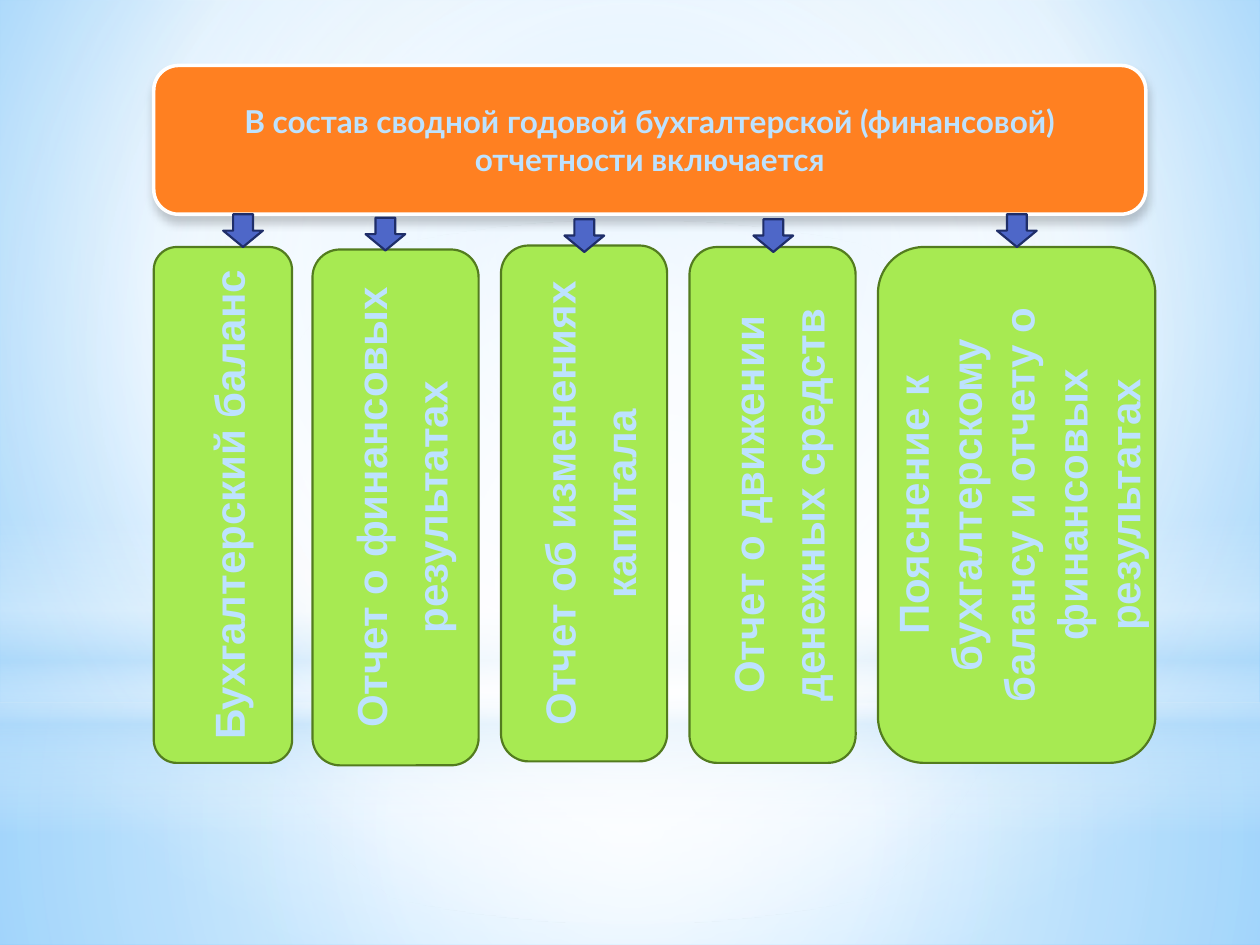
from lxml import etree
from pptx import Presentation
from pptx import util as u
from pptx.dml.color import RGBColor
from pptx.enum import shapes, text
from pptx.oxml import parse_xml
from pptx.oxml.ns import nsdecls, qn

ORANGE = RGBColor(0xFF, 0x80, 0x21)
GREEN = RGBColor(0xA7, 0xEA, 0x52)
DARK_GREEN = RGBColor(0x53, 0x7C, 0x1F)
BLUE = RGBColor(0x4E, 0x67, 0xC8)
NAVY = RGBColor(0x1F, 0x2E, 0x69)
OUTLINE = RGBColor(0x17, 0x20, 0x4F)
PALE = RGBColor(0xBD, 0xE2, 0xFF)
SKY = RGBColor(0x9E, 0xD5, 0xFF)
DEEP_SKY = RGBColor(0x5B, 0xB9, 0xFF)
MIST = RGBColor(0xB4, 0xDC, 0xFA)
WHITE = RGBColor(0xFF, 0xFF, 0xFF)
BLACK = RGBColor(0, 0, 0)


def set_gradient(element, stops, focus):
    stops_xml = "".join(
        f'<a:gs pos="{pos * 1000}"><a:srgbClr val="{color}">'
        f'<a:alpha val="{alpha * 1000}"/></a:srgbClr></a:gs>'
        for pos, color, alpha in stops)
    direction = '<a:lin ang="5400000" scaled="0"/>'
    if focus:
        l, t, r, b = (side * 1000 for side in focus)
        direction = (f'<a:path path="circle"><a:fillToRect l="{l}" t="{t}" '
                     f'r="{r}" b="{b}"/></a:path>')
    solid = element.find(".//" + qn("a:solidFill"))
    solid.getparent().replace(solid, parse_xml(
        f'<a:gradFill rotWithShape="1" {nsdecls("a")}>'
        f'<a:gsLst>{stops_xml}</a:gsLst>{direction}</a:gradFill>'))


def add_text(sp, content, font="Arial", size=24, spacing=1.0, vert="horz"):
    tf = sp.text_frame
    tf.word_wrap = True
    tf.vertical_anchor = text.MSO_ANCHOR.MIDDLE
    tf._txBody.bodyPr.set("vert", vert)
    p = tf.paragraphs[0]
    p.alignment = text.PP_ALIGN.CENTER
    p.line_spacing = spacing
    r = p.add_run()
    r.text = content
    r.font.name = font
    r.font.size = u.Pt(size)
    r.font.bold = True
    r.font.color.rgb = PALE
    r._r.get_or_add_rPr().insert(0, parse_xml(
        f'<a:ln w="12700" {nsdecls("a")}><a:solidFill>'
        f'<a:srgbClr val="{OUTLINE}"/></a:solidFill></a:ln>'))


prs = Presentation()
prs.slide_width, prs.slide_height = u.Cm(25.4), u.Cm(19.05)
s = prs.slides.add_slide(prs.slide_layouts[6])
s.background.fill.solid()
set_gradient(s.element, [(0, SKY, 100), (60, WHITE, 100), (100, DEEP_SKY, 100)],
             (20, 10, 20, 60))

shape_types = shapes.MSO_SHAPE
center = (50, 50, 50, 50)
glows = [
    (shape_types.RECTANGLE, 14.17, 4.88, center,
     [(0, WHITE, 91), (37, WHITE, 76), (100, MIST, 79)]),
    (shape_types.RECTANGLE, 0, 14.17, center,
     [(0, WHITE, 89), (48, WHITE, 62), (100, MIST, 79)]),
    (shape_types.RECTANGLE, 10.46, 6.35, None,
     [(0, WHITE, 0), (29, WHITE, 30), (45, MIST, 40),
      (55, WHITE, 26), (65, MIST, 60), (100, WHITE, 0)]),
    (shape_types.OVAL, 4.45, 14.17, center, [(0, WHITE, 100), (56, WHITE, 0)]),
]
for kind, top, height, focus, stops in glows:
    sp = s.shapes.add_shape(kind, 0, u.Cm(top), prs.slide_width, u.Cm(height))
    sp.shadow.inherit = False
    sp.fill.solid()
    sp.line.fill.background()
    set_gradient(sp._element.spPr, stops, focus)

header = s.shapes.add_shape(shape_types.ROUNDED_RECTANGLE,
                            u.Cm(3.1), u.Cm(1.32), u.Cm(20), u.Cm(3))
header.shadow.inherit = False
header.fill.solid()
header.fill.fore_color.rgb = ORANGE
header.line.color.rgb = WHITE
header.line.width = u.Pt(2)
effects = header._element.spPr.find(qn("a:effectLst"))
shadow = etree.SubElement(effects, qn("a:outerShdw"), blurRad=str(u.Pt(5)),
                          dist=str(u.Pt(4)), dir="5400000", rotWithShape="0")
color = etree.SubElement(shadow, qn("a:srgbClr"), val=str(BLACK))
etree.SubElement(color, qn("a:alpha"), val="20000")
add_text(header, "В состав сводной годовой бухгалтерской (финансовой) "
         "отчетности включается", font="Lato", size=18)

reports = [
    ("Бухгалтерский баланс", 3.1, 4.98, 2.79, 1.2),
    ("Отчет о финансовых результатах", 6.3, 5.03, 3.35, 1.2),
    ("Отчет об изменениях капитала", 10.1, 4.95, 3.35, 1.2),
    ("Отчет о движении денежных средств", 13.9, 4.98, 3.35, 1.2),
    ("Пояснение к бухгалтерскому балансу и отчету о финансовых результатах",
     17.7, 4.98, 5.59, 1.05),
]
for name, left, top, width, spacing in reports:
    sp = s.shapes.add_shape(shape_types.ROUNDED_RECTANGLE,
                            u.Cm(left), u.Cm(top), u.Cm(width), u.Cm(10.4))
    sp.shadow.inherit = False
    sp.fill.solid()
    sp.fill.fore_color.rgb = GREEN
    sp.line.color.rgb = DARK_GREEN
    sp.line.width = u.Pt(1.25)
    add_text(sp, name, spacing=spacing, vert="vert270")

arrows = [(4.5, 4.32), (7.37, 4.39), (11.38, 4.42), (15.19, 4.42), (20.1, 4.32)]
for left, top in arrows:
    sp = s.shapes.add_shape(shape_types.DOWN_ARROW,
                            u.Cm(left), u.Cm(top), u.Cm(0.8), u.Cm(0.66))
    sp.shadow.inherit = False
    sp.fill.solid()
    sp.fill.fore_color.rgb = BLUE
    sp.line.color.rgb = NAVY
    sp.line.width = u.Pt(1.25)

prs.save("out.pptx")
